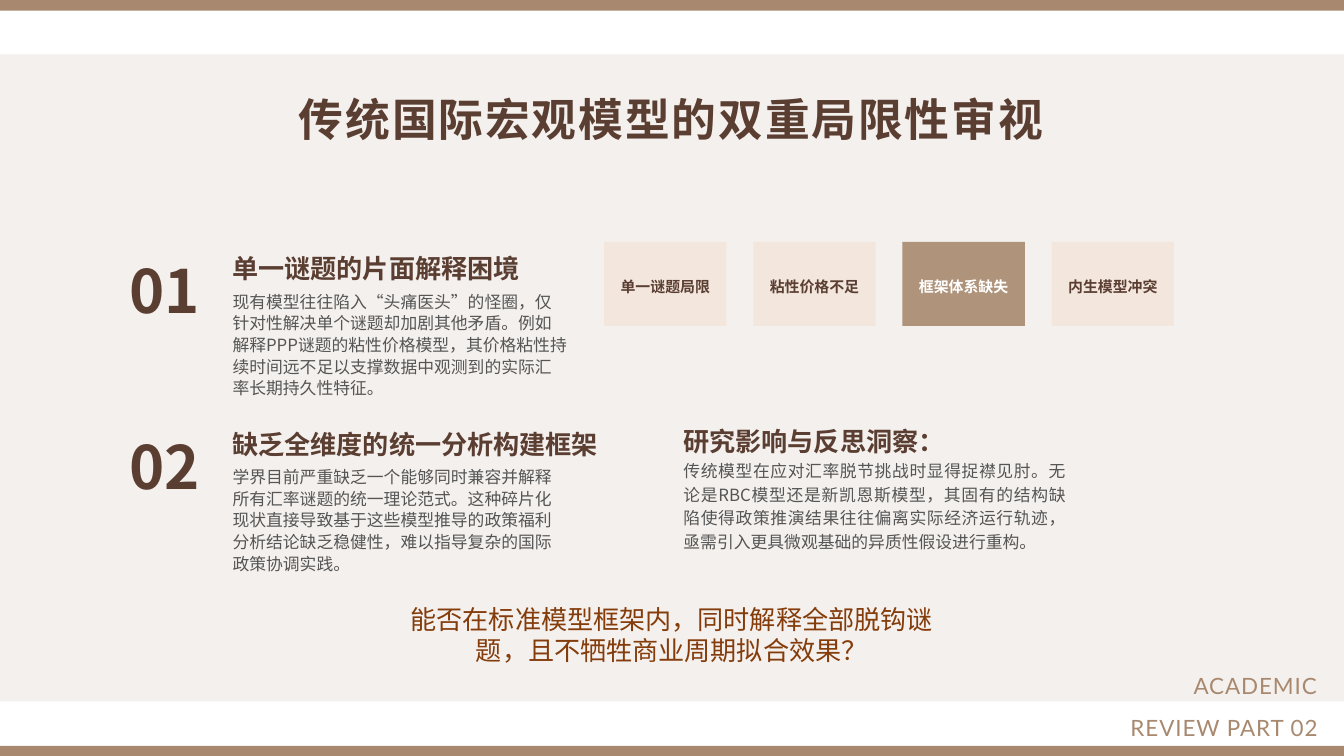
"""Build a slide on the two limits of traditional international macro models."""
from dataclasses import dataclass

from lxml.etree import SubElement
from pptx import Presentation
from pptx.dml.color import RGBColor
from pptx.enum.shapes import MSO_SHAPE
from pptx.enum.text import MSO_ANCHOR, MSO_AUTO_SIZE, PP_ALIGN
from pptx.oxml.ns import qn
from pptx.util import Inches, Pt

PANEL = RGBColor(0xF4, 0xF0, 0xED)
TAN = RGBColor(0xA8, 0x89, 0x6F)
PEACH = RGBColor(0xEF, 0xCF, 0xBA)
BROWN = RGBColor(0x5B, 0x3E, 0x32)
GREY = RGBColor(0x55, 0x55, 0x55)
RUST = RGBColor(0x84, 0x3C, 0x0B)
WHITE = RGBColor(0xFF, 0xFF, 0xFF)
CHINESE_FONT = "Noto Sans CJK SC"
LATIN_FONT = "Lato"
SLIDE_WIDTH, SLIDE_HEIGHT = 20, 11.25
TILE_LEFT, TILE_TOP, TILE_PITCH = 8.99, 3.6, 2.22
TILE_WIDTH, TILE_HEIGHT = 1.82, 1.25


@dataclass
class Limitation:
    number: str
    heading: str
    body: str
    top: float
    heading_width: float


@dataclass
class Tile:
    label: str
    fill: RGBColor = PEACH
    opacity: int = 30
    color: RGBColor = BROWN


LIMITATIONS = [
    Limitation(
        "01", "单一谜题的片面解释困境",
        "现有模型往往陷入“头痛医头”的怪圈，仅针对性解决单个谜题却加剧其他矛盾。"
        "例如解释PPP谜题的粘性价格模型，其价格粘性持续时间远不足以支撑数据中观测到的实际汇率长期持久性特征。",
        3.43, 4.99),
    Limitation(
        "02", "缺乏全维度的统一分析构建框架",
        "学界目前严重缺乏一个能够同时兼容并解释所有汇率谜题的统一理论范式。"
        "这种碎片化现状直接导致基于这些模型推导的政策福利分析结论缺乏稳健性，难以指导复杂的国际政策协调实践。",
        6.04, 5.7),
]
TILES = [
    Tile("单一谜题局限"),
    Tile("粘性价格不足"),
    Tile("框架体系缺失", TAN, 90, WHITE),
    Tile("内生模型冲突"),
]
INSIGHT = (
    "传统模型在应对汇率脱节挑战时显得捉襟见肘。无论是RBC模型还是新凯恩斯模型，"
    "其固有的结构缺陷使得政策推演结果往往偏离实际经济运行轨迹，亟需引入更具微观基础的异质性假设进行重构。"
)


def write_text(shape, text: str, *, size: float, color: RGBColor = BROWN,
               bold: bool = False, font_name: str = CHINESE_FONT,
               align: PP_ALIGN = PP_ALIGN.LEFT, line_spacing=None,
               letter_spacing: float = 0, anchor: MSO_ANCHOR = MSO_ANCHOR.TOP,
               insets: tuple = (0, 0)) -> None:
    """Put one formatted paragraph into a shape."""
    frame = shape.text_frame
    frame.word_wrap = True
    frame.auto_size = MSO_AUTO_SIZE.NONE
    frame.vertical_anchor = anchor
    frame.margin_left = frame.margin_right = Inches(insets[0])
    frame.margin_top = frame.margin_bottom = Inches(insets[1])
    paragraph = frame.paragraphs[0]
    paragraph.alignment = align
    paragraph.line_spacing = line_spacing
    run = paragraph.add_run()
    run.text = text
    font = run.font
    font.size, font.bold, font.name = Pt(size), bold, font_name
    font.color.rgb = color
    properties = run._r.get_or_add_rPr()
    SubElement(properties, qn("a:ea"), typeface=font_name)
    if letter_spacing:
        properties.set("spc", str(int(letter_spacing * 100)))


def add_text(slide, box: tuple, text: str, **text_format):
    """Add a text box at left, top, width, height in inches."""
    shape = slide.shapes.add_textbox(*map(Inches, box))
    write_text(shape, text, **text_format)
    return shape


def add_block(slide, box: tuple, fill: RGBColor, opacity: int = 100):
    """Add a borderless rectangle with an opacity in percent."""
    shape = slide.shapes.add_shape(MSO_SHAPE.RECTANGLE, *map(Inches, box))
    shape.shadow.inherit = False
    shape.line.fill.background()
    shape.fill.solid()
    shape.fill.fore_color.rgb = fill
    if opacity < 100:
        color = shape.element.spPr.find(qn("a:solidFill"))[0]
        SubElement(color, qn("a:alpha"), val=str(opacity * 1000))
    return shape


def add_title(slide, text: str) -> None:
    """Place the title placeholder in front of the panel."""
    title = slide.shapes.title
    title.element.getparent().append(title.element)
    title.left, title.top = Inches(3.01), Inches(1)
    title.width, title.height = Inches(13.96), Inches(1.12)
    write_text(title, text, size=48, bold=True, align=PP_ALIGN.CENTER,
               line_spacing=Pt(84), letter_spacing=2)


def add_limitation(slide, item: Limitation) -> None:
    """Draw a numbered heading with its explanation."""
    add_text(slide, (1.92, item.top, 1.43, 1.38), item.number,
             size=64, bold=True, line_spacing=Pt(102))
    add_text(slide, (3.46, item.top + 0.1, item.heading_width, 0.67), item.heading,
             size=28, bold=True, line_spacing=Pt(50.4))
    add_text(slide, (3.46, item.top + 0.88, 4.99, 1.18), item.body,
             size=18, color=GREY, line_spacing=1.08)


def add_tile(slide, index: int, tile: Tile) -> None:
    """Draw one keyword tile of the row."""
    box = (TILE_LEFT + index * TILE_PITCH, TILE_TOP, TILE_WIDTH, TILE_HEIGHT)
    shape = add_block(slide, box, tile.fill, tile.opacity)
    write_text(shape, tile.label, size=16, color=tile.color, bold=True,
               align=PP_ALIGN.CENTER, line_spacing=1.25, anchor=MSO_ANCHOR.MIDDLE)


def main() -> None:
    """Build and save the presentation."""
    presentation = Presentation()
    presentation.slide_width = Inches(SLIDE_WIDTH)
    presentation.slide_height = Inches(SLIDE_HEIGHT)
    slide = presentation.slides.add_slide(presentation.slide_layouts[5])

    add_block(slide, (0, 0.81, SLIDE_WIDTH, 9.63), PANEL)
    for top in (0, 11.1):
        add_block(slide, (0, top, SLIDE_WIDTH, 0.16), TAN)
    add_title(slide, "传统国际宏观模型的双重局限性审视")
    add_text(slide, (16.54, 9.78, 3.07, 0.61), "ACADEMIC REVIEW PART 02",
             size=24, color=TAN, font_name=LATIN_FONT, align=PP_ALIGN.RIGHT,
             line_spacing=Pt(45.1), letter_spacing=1)
    for item in LIMITATIONS:
        add_limitation(slide, item)
    for index, tile in enumerate(TILES):
        add_tile(slide, index, tile)
    add_text(slide, (10.17, 6.22, 5.69, 0.56), "研究影响与反思洞察：",
             size=28, bold=True, line_spacing=1.25)
    add_text(slide, (10.17, 6.81, 5.69, 1.39), INSIGHT, size=18, color=GREY,
             align=PP_ALIGN.JUSTIFY, line_spacing=1.17)
    question = add_text(slide, (5.89, 8.93, 8.21, 1.51),
                        "能否在标准模型框架内，同时解释全部脱钩谜题，且不牺牲商业周期拟合效果？",
                        size=28, color=RUST, align=PP_ALIGN.CENTER, insets=(0.1, 0.05))
    question.text_frame.auto_size = MSO_AUTO_SIZE.SHAPE_TO_FIT_TEXT
    presentation.save("out.pptx")


if __name__ == "__main__":
    main()
